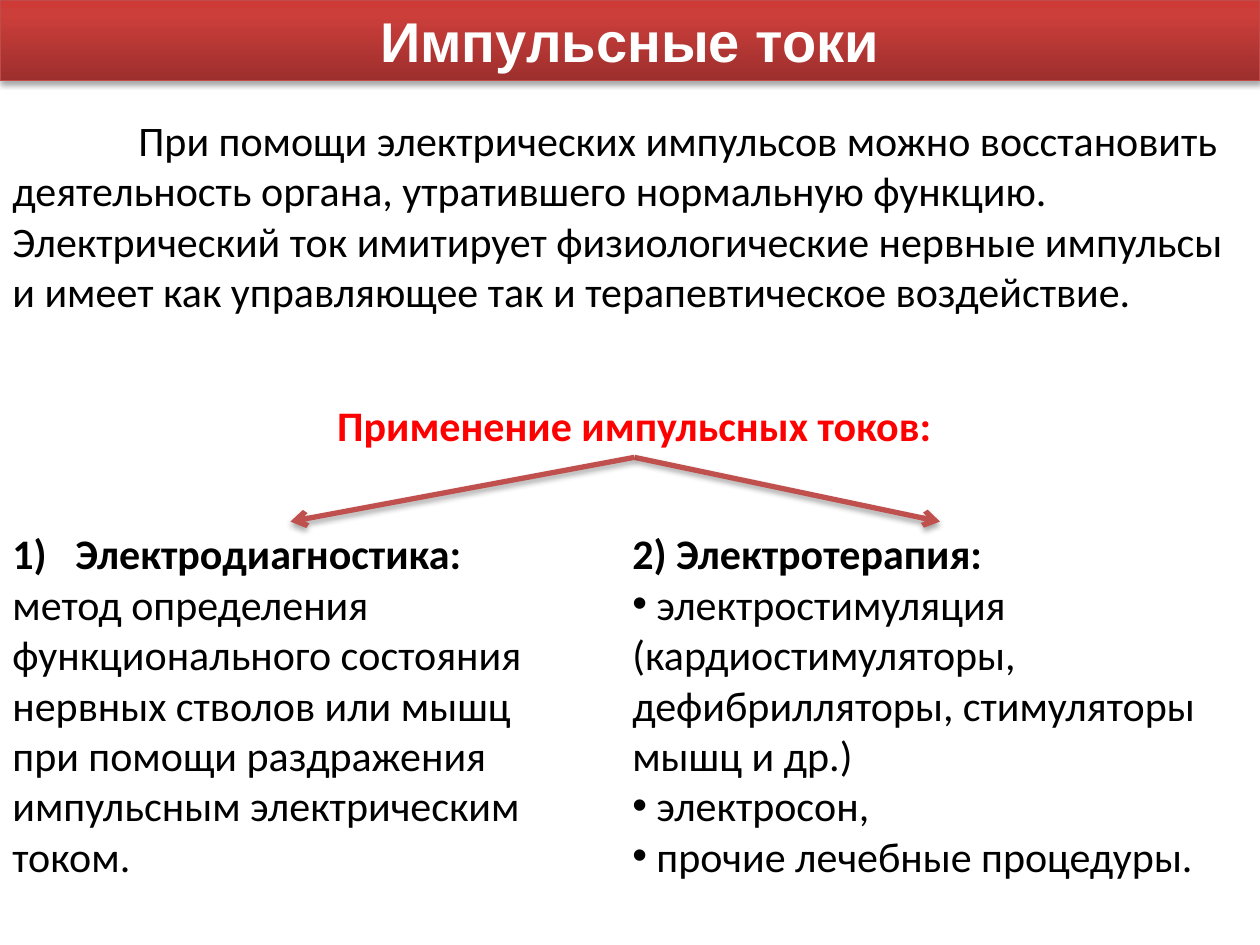
import copy
import pptx
import pptx.util
import pptx.oxml
import pptx.oxml.ns
import pptx.dml.color
import pptx.enum.shapes
import pptx.enum.text

Inches, Pt = pptx.util.Inches, pptx.util.Pt
Align = pptx.enum.text.PP_ALIGN

WIDE, HIGH = 10, 7.5
HUES = {"white": "FFFFFF", "black": "000000", "red": "FF0000",
        "edge": "BF4C48", "arrow": "C0504D"}
BLEND = [(0, "9C2F2D"), (0.8, "CB3E3A"), (1, "CE3B37")]

TITLE = "Импульсные токи"
HEAD = "Применение импульсных токов:"
INTRO = ("При помощи электрических импульсов можно восстановить деятельность "
         "органа, утратившего нормальную функцию. Электрический ток имитирует "
         "физиологические нервные импульсы и имеет как управляющее так и "
         "терапевтическое воздействие.")
# Each paragraph: text, bold, bullet
TEST = [
    ("Электродиагностика:", True, "number"),
    ("метод определения функционального состояния нервных стволов или мышц "
     "при помощи раздражения импульсным электрическим током.", False, None),
]
CURE = [
    ("2) Электротерапия:", True, None),
    (" электростимуляция (кардиостимуляторы, дефибрилляторы, стимуляторы "
     "мышц и др.)", False, "dot"),
    (" электросон,", False, "dot"),
    (" прочие лечебные процедуры.", False, "dot"),
]
MARKS = {
    "number": ['<a:buFont %s typeface="+mj-lt"/>',
               '<a:buAutoNum %s type="arabicParenR"/>'],
    "dot": ['<a:buFont %s typeface="Arial"/>', '<a:buChar %s char="•"/>'],
}
SHADE = ('<a:effectLst %s><a:outerShdw blurRad="40000" dist="23000" '
         'dir="5400000" rotWithShape="0"><a:srgbClr val="000000">'
         '<a:alpha val="35000"/></a:srgbClr></a:outerShdw></a:effectLst>')

# Left, top, width, height as shares of the slide
ROW = 0.552
PLACES = {
    "title": (0, 0, 1, 0.085),
    "intro": (0, 0.115, 1, 0.283),
    "head": (0.062, 0.416, 0.883, 0.068),
    "test": (0, ROW, 0.461, 0.39),
    "cure": (0.492, ROW, 0.508, 0.39),
}


def hue(name):
    return pptx.dml.color.RGBColor.from_string(HUES.get(name, name))


def node(text):
    return pptx.oxml.parse_xml(text % pptx.oxml.ns.nsdecls("a"))


def area(name):
    x, y, w, h = PLACES[name]
    return [Inches(round(v, 2))
            for v in (x * WIDE, y * HIGH, w * WIDE, h * HIGH)]


def write(para, text, bold=False, color="black", size=24, face="Calibri"):
    run = para.add_run()
    run.text = text
    font = run.font
    font.name, font.size, font.bold = face, Pt(size), bold
    font.color.rgb = hue(color)


def add_box(slide, name, items, color="black", align=Align.LEFT, first=0):
    """Add a text box; first is the first-line indent in inches."""
    box = slide.shapes.add_textbox(*area(name))
    frame = box.text_frame
    frame.word_wrap = True
    for i, (text, bold, mark) in enumerate(items):
        para = frame.paragraphs[0] if i == 0 else frame.add_paragraph()
        para.alignment = align
        write(para, text, bold, color)
        props = para._p.get_or_add_pPr()
        if first:
            props.set("indent", str(Inches(first)))
        if mark == "number":
            props.set("marL", str(Inches(0.5)))
            props.set("indent", str(Inches(-0.5)))
        for part in MARKS.get(mark, []):
            props.append(node(part))
    return box


def add_title(slide):
    bar = slide.shapes.title
    bar.left, bar.top, bar.width, bar.height = area("title")
    bar.fill.gradient()
    bar.fill.gradient_angle = 90
    stop = bar._element.spPr.findall(".//" + pptx.oxml.ns.qn("a:gs"))[0]
    stop.addnext(copy.deepcopy(stop))
    for stop, (spot, color) in zip(bar.fill.gradient_stops, BLEND):
        stop.position = spot
        stop.color.rgb = hue(color)
    bar.line.color.rgb = hue("edge")
    bar.line.width = Pt(0.75)
    bar._element.spPr.append(node(SHADE))
    frame = bar.text_frame
    frame.auto_size = pptx.enum.text.MSO_AUTO_SIZE.NONE
    frame.vertical_anchor = pptx.enum.text.MSO_ANCHOR.MIDDLE
    para = frame.paragraphs[0]
    para.alignment = Align.CENTER
    write(para, TITLE, True, "white", 32, "Arial")


def add_arrow(slide, start, end):
    """Join the bottom of one box to the top of another."""
    kind = pptx.enum.shapes.MSO_CONNECTOR.STRAIGHT
    arrow = slide.shapes.add_connector(kind, 0, 0, 0, 0)
    arrow.begin_connect(start, 2)
    arrow.end_connect(end, 0)
    arrow.line.color.rgb = hue("arrow")
    arrow.line.width = Pt(3)
    arrow.line._get_or_add_ln().append(node('<a:tailEnd %s type="arrow"/>'))
    arrow._element.spPr.append(node(SHADE))


def main():
    deck = pptx.Presentation()
    deck.slide_width, deck.slide_height = Inches(WIDE), Inches(HIGH)
    slide = deck.slides.add_slide(deck.slide_layouts[5])
    add_title(slide)
    head = add_box(slide, "head", [(HEAD, True, None)], "red", Align.CENTER)
    test = add_box(slide, "test", TEST)
    cure = add_box(slide, "cure", CURE)
    for end in (cure, test):
        add_arrow(slide, head, end)
    add_box(slide, "intro", [(INTRO, False, None)], first=1)
    deck.save("out.pptx")


if __name__ == "__main__":
    main()
